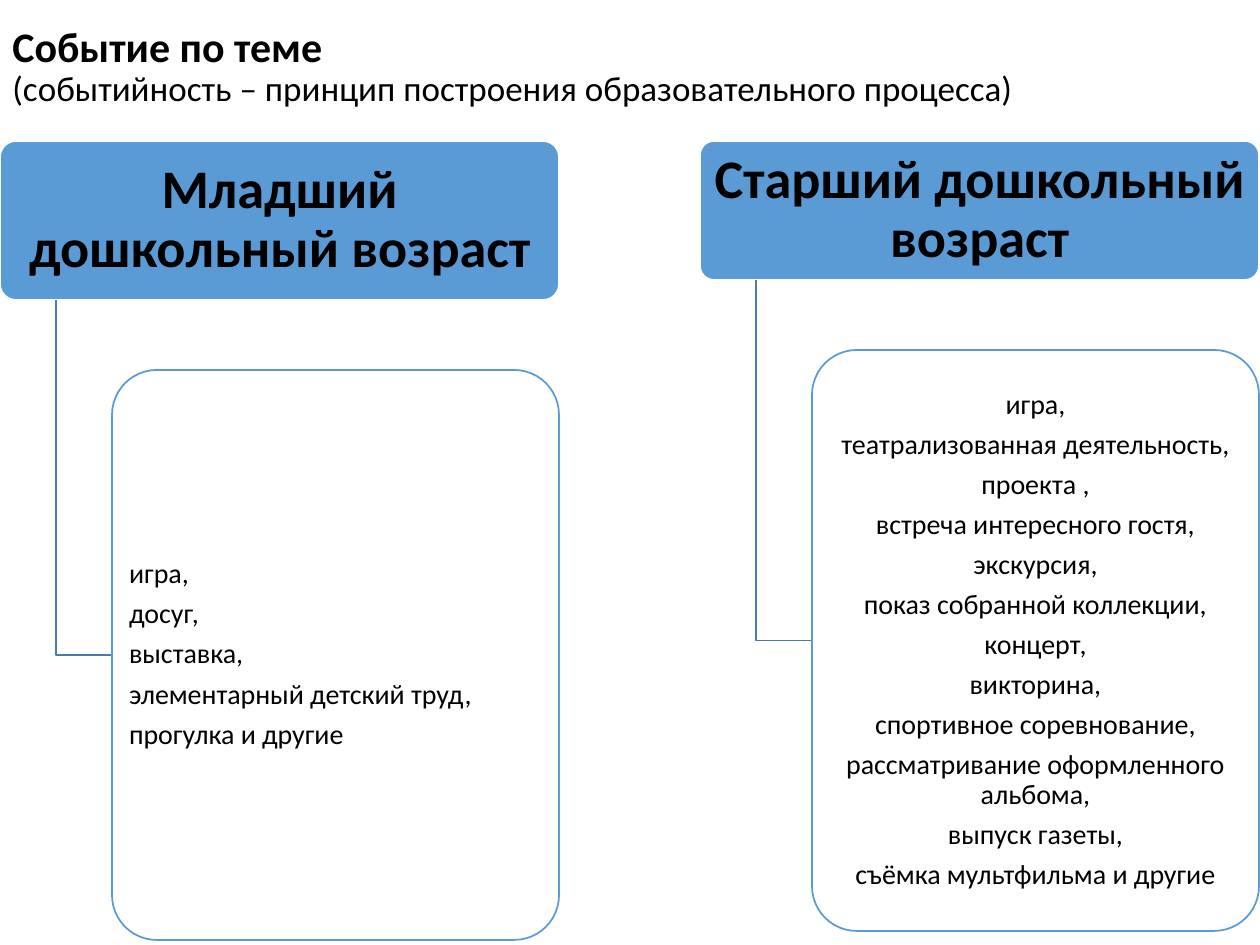
import pptx
import pptx.util
import pptx.oxml.ns
import lxml.etree
from pptx.dml.color import RGBColor
from pptx.enum.shapes import MSO_SHAPE
from pptx.enum.text import MSO_ANCHOR, PP_ALIGN

TITLE = "Событие по теме"
NOTE = "(событийность – принцип построения образовательного процесса)"
COLUMNS = [
    dict(left=0, head_high=159, body_high=570, align=PP_ALIGN.LEFT,
         head="Младший дошкольный возраст",
         items=["игра,", "досуг,", "выставка,", "элементарный детский труд,",
                "прогулка и другие"]),
    dict(left=700, head_high=139, body_high=581, align=PP_ALIGN.CENTER,
         head="Старший дошкольный возраст",
         items=["игра,", "театрализованная деятельность,", "проекта ,",
                "встреча интересного гостя,", "экскурсия,",
                "показ собранной коллекции,", "концерт,", "викторина,",
                "спортивное соревнование,",
                "рассматривание оформленного альбома,", "выпуск газеты,",
                "съёмка мультфильма и другие"]),
]
BLUE, WHITE, LINE, BLACK = "5B9BD5", "FFFFFF", "497CAB", "000000"
WIDE, HIGH = 1260, 945
TOP, HEAD_WIDE, INDENT, GAP = 141, 559, 112, 70


def px(count):
    return pptx.util.Emu(round(count * 914400 / 126))


def color(code):
    return RGBColor.from_string(code)


def style(run, size, bold=False):
    run.font.name = "Calibri"
    run.font.size = pptx.util.Pt(size)
    run.font.bold = bold
    run.font.color.rgb = color(BLACK)


def add_card(left, top, wide, high, fill, line, inset):
    card = slide.shapes.add_shape(
        MSO_SHAPE.ROUNDED_RECTANGLE, px(left), px(top), px(wide), px(high))
    card.adjustments[0] = 0.1
    card.shadow.inherit = False
    card.fill.solid()
    card.fill.fore_color.rgb = color(fill)
    card.line.color.rgb = color(line)
    card.line.width = pptx.util.Pt(1)
    frame = card.text_frame
    frame.word_wrap = True
    frame.vertical_anchor = MSO_ANCHOR.MIDDLE
    frame.margin_left = frame.margin_right = px(inset)
    frame.margin_top = frame.margin_bottom = px(inset * 0.65)
    return card


def write(card, lines, size, align, bold=False):
    card.text_frame.text = "\n".join(lines)
    for para in card.text_frame.paragraphs:
        para.alignment = align
        para.line_spacing = 0.9
        para.space_after = pptx.util.Pt(size * 0.35)
        for run in para.runs:
            style(run, size, bold)


def fade(card, percent):
    """Set the opacity of a solid fill."""
    tone = card.fill._xPr.find(".//" + pptx.oxml.ns.qn("a:srgbClr"))
    alpha = lxml.etree.SubElement(tone, pptx.oxml.ns.qn("a:alpha"))
    alpha.set("val", str(percent * 1000))


def add_elbow(left, top, right, low):
    pen = slide.shapes.build_freeform(px(left), px(top))
    pen.add_line_segments(
        [(px(left), px(low)), (px(right), px(low))], close=False)
    elbow = pen.convert_to_shape()
    elbow.shadow.inherit = False
    elbow.fill.background()
    elbow.line.color.rgb = color(LINE)
    elbow.line.width = pptx.util.Pt(1)


def add_column(left, head_high, body_high, align, head, items):
    base = TOP + head_high
    body_top, body_left = base + GAP, left + INDENT
    card = add_card(left, TOP, HEAD_WIDE, head_high, BLUE, WHITE, 8)
    write(card, [head], 31, PP_ALIGN.CENTER, True)
    add_elbow(left + INDENT / 2, base, body_left, body_top + body_high / 2)
    body = add_card(body_left, body_top, HEAD_WIDE - INDENT, body_high,
                    WHITE, BLUE, 4)
    fade(body, 90)
    write(body, items, 16, align)


deck = pptx.Presentation()
deck.slide_width, deck.slide_height = px(WIDE), px(HIGH)
slide = deck.slides.add_slide(deck.slide_layouts[6])

title = slide.shapes.add_textbox(0, 0, px(WIDE), px(135)).text_frame
title.word_wrap = True
title.vertical_anchor = MSO_ANCHOR.MIDDLE
para = title.paragraphs[0]
para.text = TITLE + "\v" + NOTE
para.line_spacing = 0.9
style(para.runs[0], 24, True)
style(para.runs[1], 20)

for column in COLUMNS:
    add_column(**column)

deck.save("out.pptx")
